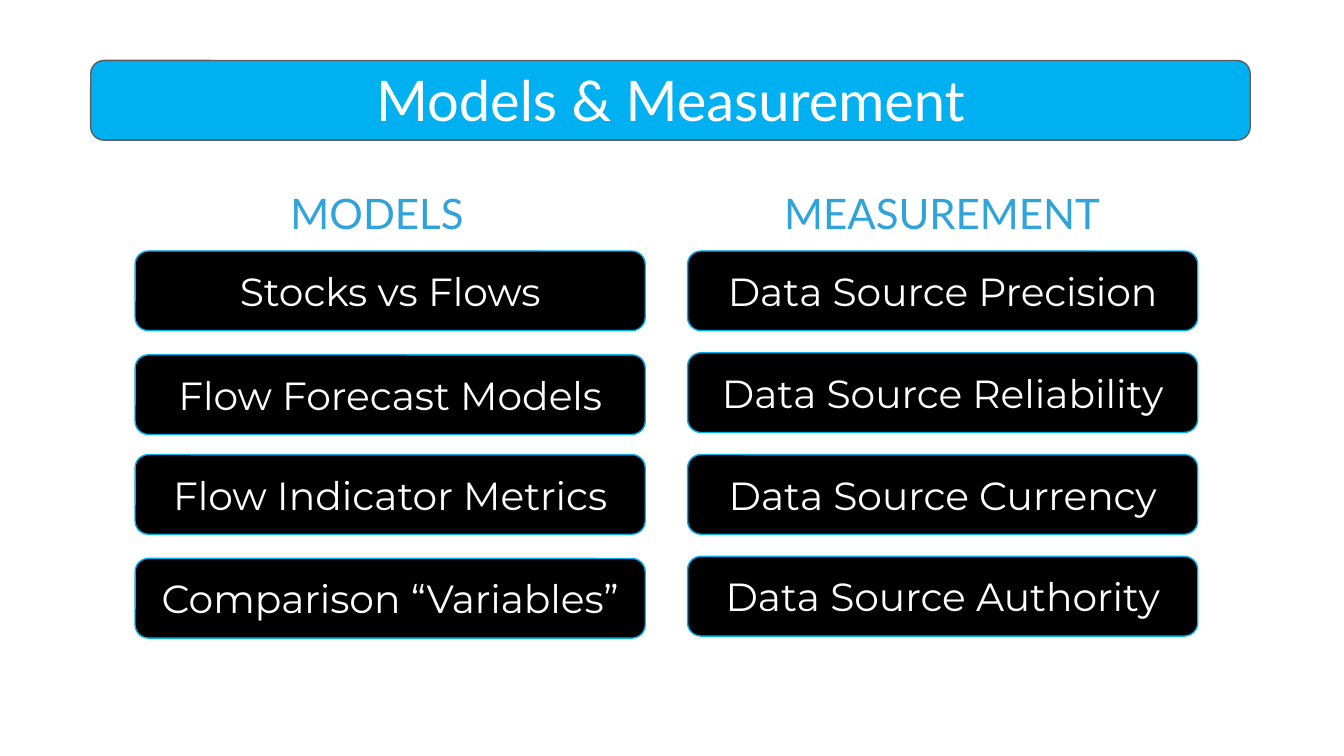
from pptx import Presentation
from pptx.dml.color import RGBColor
from pptx.enum.shapes import MSO_SHAPE
from pptx.enum.text import MSO_ANCHOR, PP_ALIGN
from pptx.util import Inches, Pt

ROUNDED = MSO_SHAPE.ROUNDED_RECTANGLE
CENTER = PP_ALIGN.CENTER
TOP, MIDDLE = MSO_ANCHOR.TOP, MSO_ANCHOR.MIDDLE
BLUE, SKY, BLACK, WHITE, GRAY = "00B0F0", "30A3DA", "000000", "FFFFFF", "5D5D5D"
BAR_H = 0.79
HEADING_H = 0.61
FIRST_BAR = 0.68

COLUMNS = [
    {
        "left": 1.34,
        "heading": "MODELS",
        "heading_box": (1.41, 1.98),
        "bars": ["Stocks vs Flows", "Flow Forecast Models",
                 "Flow Indicator Metrics", "Comparison “Variables”"],
        "offsets": [0, 1.03, 2.02, 3.05],
    },
    {
        "left": 6.82,
        "heading": "MEASUREMENT",
        "heading_box": (0.8, 3.45),
        "bars": ["Data Source Precision", "Data Source Reliability",
                 "Data Source Currency", "Data Source Authority"],
        "offsets": [1.01 * row for row in range(4)],
    },
]


def color(hex_code):
    """Return the RGB colour for a hex string."""
    return RGBColor.from_string(hex_code)


def write(sp, text, size, font, hex_code, anchor):
    """Write one centred line of text into a shape."""
    tf = sp.text_frame
    tf.word_wrap = True
    tf.vertical_anchor = anchor
    p = tf.paragraphs[0]
    p.text = text
    p.alignment = CENTER
    p.font.size = Pt(size)
    p.font.name = font
    p.font.color.rgb = color(hex_code)


def add_bar(s, left, top, width, fill, line):
    """Add a rounded bar and return it."""
    sp = s.shapes.add_shape(ROUNDED, Inches(left), Inches(top),
                            Inches(width), Inches(BAR_H))
    sp.shadow.inherit = False
    sp.fill.solid()
    sp.fill.fore_color.rgb = color(fill)
    sp.line.color.rgb = color(line)
    sp.line.width = Pt(1)
    return sp


def add_label(s, left, top, width, height, text, size, hex_code):
    """Add a centred text box."""
    sp = s.shapes.add_textbox(Inches(left), Inches(top),
                              Inches(width), Inches(height))
    write(sp, text, size, "Lato", hex_code, TOP)


def add_title(s, left, top, width):
    """Add the title banner with its text."""
    add_bar(s, left, top, width, BLUE, GRAY)
    add_label(s, left, top, width, 0.74, "Models & Measurement", 40, WHITE)


def add_column(s, column, top, width):
    """Add a heading and the bars below it."""
    left = column["left"]
    indent, heading_w = column["heading_box"]
    add_label(s, left + indent, top, heading_w, HEADING_H,
              column["heading"], 30, SKY)
    for text, offset in zip(column["bars"], column["offsets"]):
        sp = add_bar(s, left, top + FIRST_BAR + offset, width, BLACK, BLUE)
        write(sp, text, 28, "Montserrat", WHITE, MIDDLE)


def main():
    """Build and save the slide."""
    prs = Presentation()
    prs.slide_width, prs.slide_height = Inches(13.33), Inches(7.5)
    s = prs.slides.add_slide(prs.slide_layouts[6])
    add_title(s, 0.9, 0.6, 11.5)
    for column in COLUMNS:
        add_column(s, column, 1.81, 5.06)
    prs.save("out.pptx")


if __name__ == "__main__":
    main()
